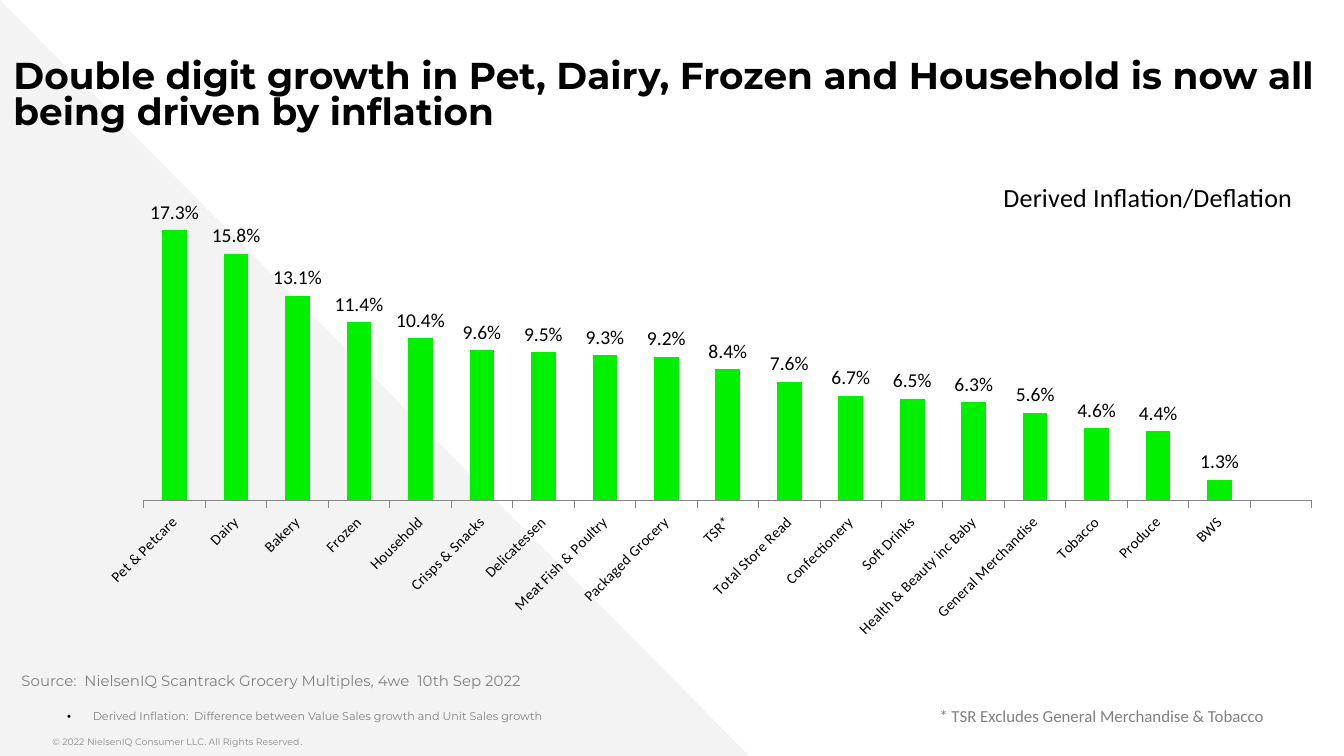
from lxml import etree
from pptx import Presentation
from pptx import util as u
from pptx.chart.data import CategoryChartData
from pptx.dml.color import RGBColor
from pptx.enum import chart as ch, shapes, text
from pptx.oxml.ns import qn

BLACK = RGBColor(0, 0, 0)
GREEN = RGBColor(0, 0xF0, 0)
GREY = RGBColor(0x80, 0x80, 0x80)
LIGHT = RGBColor(0xF3, 0xF3, 0xF3)
AXIS = RGBColor(0x86, 0x86, 0x86)
LEGAL = RGBColor(0x88, 0x88, 0x88)

TITLE = "Double digit growth in Pet, Dairy, Frozen and Household is now all being driven by inflation"
HEAD = "Derived Inflation/Deflation"
SOURCE = "Source:  NielsenIQ Scantrack Grocery Multiples, 4we  10th Sep 2022"
NOTE = "Derived Inflation:  Difference between Value Sales growth and Unit Sales growth"
STAR = "* TSR Excludes General Merchandise & Tobacco"
RIGHTS = [("© 2022 NielsenIQ Consumer LLC. All Rights Reserved", "Montserrat"), (".", "Roboto")]
GROWTH = [
    ("Pet & Petcare", 0.173), ("Dairy", 0.158), ("Bakery", 0.131), ("Frozen", 0.114),
    ("Household", 0.104), ("Crisps & Snacks", 0.096), ("Delicatessen", 0.095),
    ("Meat Fish & Poultry", 0.093), ("Packaged Grocery", 0.092), ("TSR*", 0.084),
    ("Total Store Read", 0.076), ("Confectionery", 0.067), ("Soft Drinks", 0.065),
    ("Health & Beauty inc Baby", 0.063), ("General Merchandise", 0.056),
    ("Tobacco", 0.046), ("Produce", 0.044), ("BWS", 0.013), ("", None),
]


def place(item, *box):
    item.left, item.top, item.width, item.height = map(u.Inches, box)


def style(font, size, color, name="Montserrat", bold=False):
    font.size, font.name, font.bold = u.Pt(size), name, bold
    font.color.rgb = color


def inset(frame, side, edge):
    frame.margin_left = frame.margin_right = u.Inches(side)
    frame.margin_top = frame.margin_bottom = u.Inches(edge)
    frame.word_wrap = True
    frame.auto_size = text.MSO_AUTO_SIZE.NONE


def node(root, tag, **atts):
    return etree.SubElement(root, qn(tag), atts)


def indent(para, left, hang, mark=None):
    props = para._p.get_or_add_pPr()
    props.set("marL", str(u.Inches(left)))
    props.set("indent", str(u.Inches(hang)))
    if mark:
        node(node(props, "a:buClr"), "a:srgbClr", val=str(BLACK))
        node(props, "a:buFont", typeface="Arial")
        node(props, "a:buChar", char=mark)
    else:
        node(props, "a:buNone")


def layout(root, index, **parts):
    for old in root.findall(qn("c:layout")):
        root.remove(old)
    outer = etree.Element(qn("c:layout"))
    root.insert(index, outer)
    manual = node(outer, "c:manualLayout")
    if "w" in parts:
        node(manual, "c:layoutTarget", val="inner")
    node(manual, "c:xMode", val="edge")
    node(manual, "c:yMode", val="edge")
    for key, val in parts.items():
        node(manual, "c:" + key, val=str(val))


def add_back(slide):
    wedge = slide.shapes.add_shape(shapes.MSO_SHAPE.RIGHT_TRIANGLE, 0, 0, 0, 0)
    place(wedge, 0, 0, 5.59, 5.64)
    wedge.shadow.inherit = False
    wedge.fill.solid()
    wedge.fill.fore_color.rgb = LIGHT
    wedge.line.fill.background()
    slide.shapes._spTree.insert(2, wedge._element)


def add_bars(slide):
    data = CategoryChartData(number_format="0.0%")
    data.categories = [name for name, _ in GROWTH]
    data.add_series("Series 1", [val for _, val in GROWTH])
    box = map(u.Inches, (0.8, 1.3, 9.2, 3.75))
    chart = slide.shapes.add_chart(ch.XL_CHART_TYPE.COLUMN_CLUSTERED, *box, data).chart
    style(chart.font, 18, BLACK, "Arial")
    chart.has_legend = False

    head = chart.chart_title
    head.text_frame.text = HEAD
    style(head.text_frame.paragraphs[0].runs[0].font, 14, BLACK, "Calibri")
    layout(head._element, 1, x=0.72, y=0)
    head._element.find(qn("c:overlay")).set("val", "1")
    layout(chart._chartSpace.chart.plotArea, 0, x=0.027, y=0.027, w=0.947, h=0.619)

    vals = chart.value_axis
    vals.minimum_scale, vals.maximum_scale = 0, 0.2
    vals.has_major_gridlines = False
    vals.visible = False
    cats = chart.category_axis
    cats.major_tick_mark = ch.XL_TICK_MARK.OUTSIDE
    cats.tick_label_position = ch.XL_TICK_LABEL_POSITION.LOW
    cats.format.line.color.rgb = AXIS
    cats.format.line.width = u.Pt(0.5)
    style(cats.tick_labels.font, 8, BLACK, "Calibri")
    cats._element.find(qn("c:txPr")).find(qn("a:bodyPr")).set("rot", "-2700000")

    plot = chart.plots[0]
    plot.gap_width = 150
    plot.vary_by_categories = False
    bars = plot.series[0].format
    bars.fill.solid()
    bars.fill.fore_color.rgb = GREEN
    plot.has_data_labels = True
    tags = plot.data_labels
    tags.show_value = True
    tags.number_format, tags.number_format_is_linked = "0.0%", False
    tags.position = ch.XL_LABEL_POSITION.OUTSIDE_END
    style(tags.font, 10.5, BLACK, "Calibri")


def add_title(slide):
    title = slide.shapes.title
    place(title, 0, 0.52, 9.92, 0.47)
    frame = title.text_frame
    frame.text = TITLE
    inset(frame, 0.1, 0)
    frame.vertical_anchor = text.MSO_ANCHOR.BOTTOM
    para = frame.paragraphs[0]
    para.alignment = text.PP_ALIGN.LEFT
    para.line_spacing = 0.8
    style(para.runs[0].font, 20, BLACK, bold=True)


def add_notes(slide):
    body = slide.placeholders[1]
    place(body, 0, 4.9, 9.61, 0.58)
    frame = body.text_frame
    inset(frame, 0, 0.1)
    first = frame.paragraphs[0]
    first.text = SOURCE
    first.space_before = u.Pt(0)
    indent(first, 0.16, 0)
    style(first.runs[0].font, 8, GREY)
    note = frame.add_paragraph()
    note.text, note.level = NOTE, 1
    note.space_before = u.Pt(10.5)
    indent(note, 0.69, -0.19, "•")
    style(note.runs[0].font, 6, GREY)


def add_small(slide):
    legal = slide.shapes.add_textbox(0, 0, 0, 0)
    place(legal, 0.39, 5.43, 5.54, 0.2)
    inset(legal.text_frame, 0, 0.05)
    for words, face in RIGHTS:
        run = legal.text_frame.paragraphs[0].add_run()
        run.text = words
        style(run.font, 5, LEGAL, face)
    star = slide.shapes.add_textbox(0, 0, 0, 0)
    place(star, 6.89, 5.2, 2.65, 0.25)
    star.text_frame.text = STAR
    star.text_frame.word_wrap = False
    star.text_frame.auto_size = text.MSO_AUTO_SIZE.SHAPE_TO_FIT_TEXT
    style(star.text_frame.paragraphs[0].runs[0].font, 9, GREY, "Calibri")


def main():
    deck = Presentation()
    deck.slide_width = u.Inches(10)
    deck.slide_height = deck.slide_width * 9 // 16
    slide = deck.slides.add_slide(deck.slide_layouts[1])
    add_back(slide)
    add_bars(slide)
    add_title(slide)
    add_notes(slide)
    add_small(slide)
    deck.save("out.pptx")


if __name__ == "__main__":
    main()
